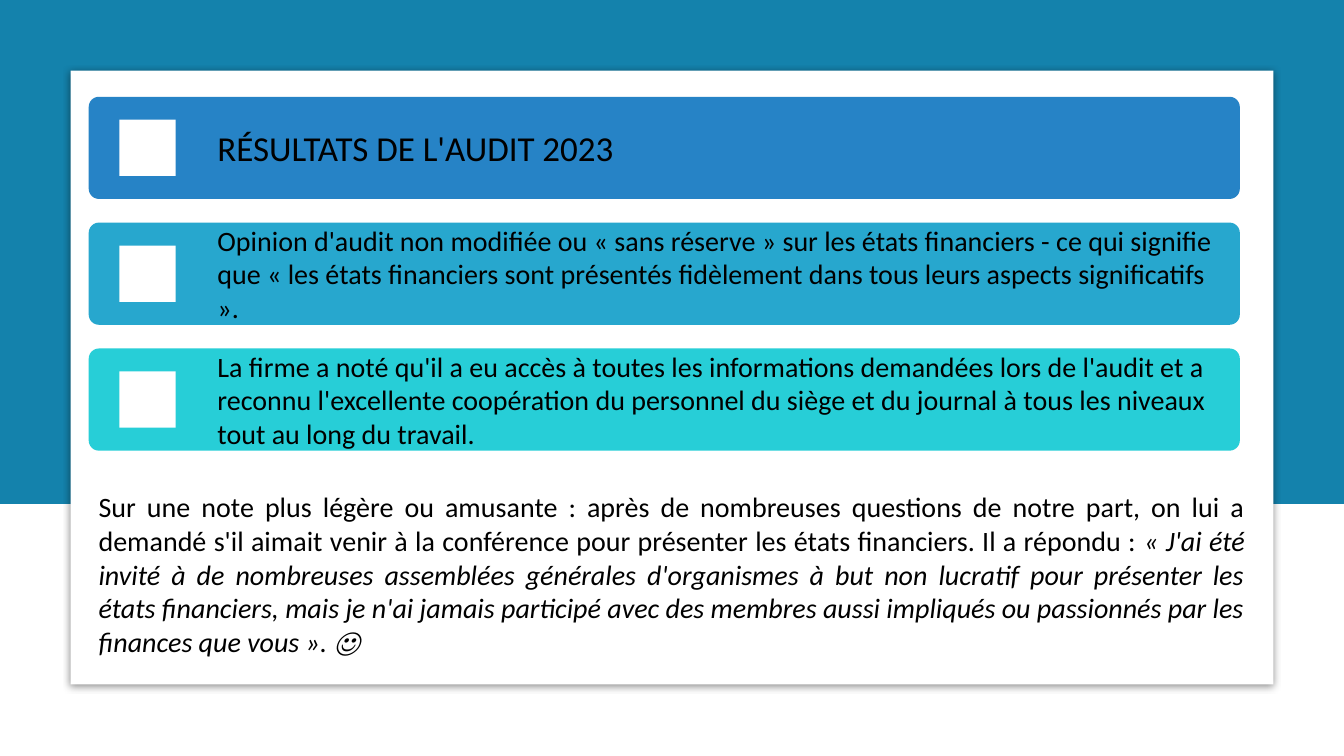
import pptx
import pptx.util
import pptx.dml.color
import pptx.enum.shapes
import pptx.enum.text
import pptx.oxml
import pptx.oxml.ns
from dataclasses import dataclass

Pt = pptx.util.Pt
SHAPE = pptx.enum.shapes.MSO_SHAPE
ALIGN = pptx.enum.text.PP_ALIGN
ANCHOR = pptx.enum.text.MSO_ANCHOR


@dataclass(frozen=True)
class Theme:
    font: str = "Calibri"
    ink: str = "000000"
    paper: str = "FFFFFF"
    band: str = "1482AC"
    bars: tuple = ("2683C6", "27A7CE", "27CED7")
    head: float = 25
    body: float = 20


THEME = Theme()
WIDE, HIGH = 960, 540
TITLE = "RÉSULTATS DE L'AUDIT 2023"
POINTS = (
    "Opinion d'audit non modifiée ou « sans réserve » sur les états financiers"
    " - ce qui signifie que « les états financiers sont présentés fidèlement"
    " dans tous leurs aspects significatifs ».",
    "La firme a noté qu'il a eu accès à toutes les informations demandées lors de"
    " l'audit et a reconnu l'excellente coopération du personnel du siège et du"
    " journal à tous les niveaux tout au long du travail.",
)
NOTE = (
    "Sur une note plus légère ou amusante : après de nombreuses questions de"
    " notre part, on lui a demandé s'il aimait venir à la conférence pour"
    " présenter les états financiers. Il a répondu : "
)
QUOTE = (
    "« J'ai été invité à de nombreuses assemblées générales d'organismes à but"
    " non lucratif pour présenter les états financiers, mais je n'ai jamais"
    " participé avec des membres aussi impliqués ou passionnés par les finances"
    " que vous ». ☺"
)


def rgb(code):
    return pptx.dml.color.RGBColor.from_string(code)


def block(slide, box, color, kind=SHAPE.RECTANGLE):
    shape = slide.shapes.add_shape(kind, *map(Pt, box))
    shape.shadow.inherit = False
    shape.fill.solid()
    shape.fill.fore_color.rgb = rgb(color)
    shape.line.fill.background()
    return shape


def place(shape, box):
    shape.left, shape.top, shape.width, shape.height = map(Pt, box)


def style(font, size):
    font.name, font.size = THEME.font, Pt(size)
    font.color.rgb = rgb(THEME.ink)


def label(shape, text, size):
    """Fill a bar's text area."""
    frame = shape.text_frame
    frame.text = text
    frame.word_wrap = True
    frame.auto_size = pptx.enum.text.MSO_AUTO_SIZE.NONE
    frame.vertical_anchor = ANCHOR.MIDDLE
    frame.margin_left = frame.margin_right = Pt(7.75)
    frame.margin_top = frame.margin_bottom = Pt(7.75)
    line = frame.paragraphs[0]
    line.alignment = ALIGN.LEFT
    line.line_spacing = 1.0
    style(line.runs[0].font, size)


def card(slide, box):
    """White panel with a soft shadow."""
    panel = block(slide, box, THEME.paper)
    glow = pptx.oxml.parse_xml(
        f'<a:outerShdw {pptx.oxml.ns.nsdecls("a")} blurRad="{Pt(5)}"'
        f' dist="{Pt(1.4)}" dir="5400000" algn="t" rotWithShape="0">'
        '<a:srgbClr val="000000"><a:alpha val="43000"/></a:srgbClr>'
        '</a:outerShdw>'
    )
    panel._element.spPr.find(pptx.oxml.ns.qn("a:effectLst")).append(glow)


def bar(slide, box, color, text, title=None):
    """Rounded bar: white square on the left, text on the right."""
    left, top, width, high = box
    back = block(slide, box, color, SHAPE.ROUNDED_RECTANGLE)
    back.adjustments[0] = 0.1
    side = 40.2
    block(slide, (left + 22, top + (high - side) / 2, side, side), THEME.paper)
    area = (left + 84.25, top, width - 90, high)
    if title is None:
        holder = slide.shapes.add_textbox(*map(Pt, area))
        label(holder, text, THEME.body)
    else:
        place(title, area)
        slide.shapes._spTree.append(title._element)
        label(title, text, THEME.head)


def stack(slide, box):
    """Evenly spaced bars, the first one holding the title."""
    left, top, width, high = box
    tall = 73
    step = (high - tall) / (len(THEME.bars) - 1)
    for i, (color, text) in enumerate(zip(THEME.bars, (TITLE, *POINTS))):
        title = slide.shapes.title if i == 0 else None
        bar(slide, (left, top + i * step, width, tall), color, text, title)


def note(slide, box):
    """Closing anecdote, with the quote in italics."""
    frame = slide.shapes.add_textbox(*map(Pt, box)).text_frame
    frame.word_wrap = True
    line = frame.paragraphs[0]
    line.alignment = ALIGN.JUSTIFY
    line.space_after = Pt(6)
    for text, slant in ((NOTE, False), (QUOTE, True)):
        run = line.add_run()
        run.text = text
        style(run.font, THEME.body)
        run.font.italic = slant


def main():
    deck = pptx.Presentation()
    deck.slide_width, deck.slide_height = Pt(WIDE), Pt(HIGH)
    slide = deck.slides.add_slide(deck.slide_layouts.get_by_name("Title Only"))
    block(slide, (0, 0, WIDE, 360), THEME.band)
    card(slide, (50.4, 50.4, WIDE - 2 * 50.4, 438.5))
    stack(slide, (63.35, 69.1, 822.25, 252.8))
    note(slide, (63.35, 346.3, 833, 128.2))
    deck.save("out.pptx")


if __name__ == "__main__":
    main()
